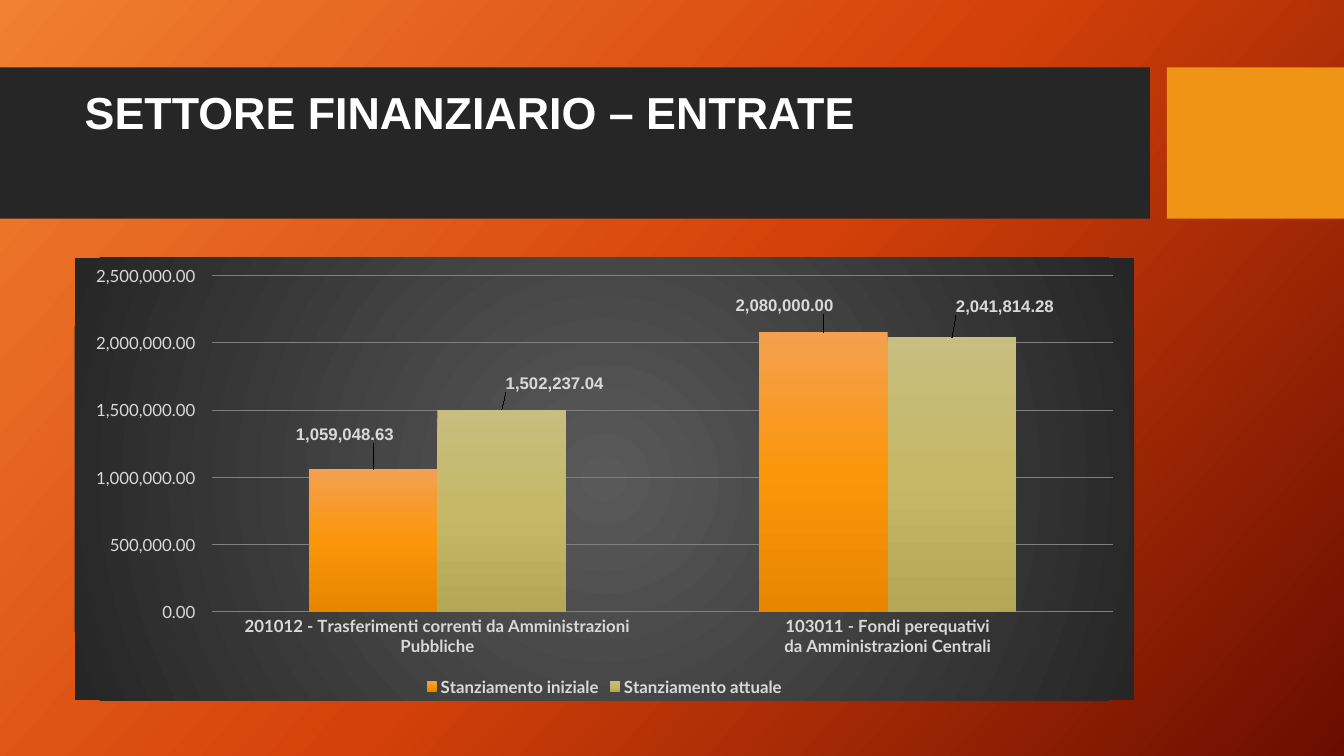
import dataclasses

import pptx
import pptx.chart.data
import pptx.dml.color
import pptx.enum.chart
import pptx.enum.shapes
import pptx.enum.text
import pptx.oxml
import pptx.oxml.ns
import pptx.util

Cm = pptx.util.Cm
COLORS = {
    "band": "262626",
    "accent": "F09415",
    "white": "FFFFFF",
    "label": "D9D9D9",
    "grid": "808080",
}
BACKGROUND = ((0, "F18031"), (50, "D54209"), (100, "6A0D00"))
PANEL = ((0, "595959"), (100, "262626"))
EURO_FORMAT = "#,##0.00\\ _€"
CATEGORIES = (
    "201012 - Trasferimenti correnti da Amministrazioni Pubbliche",
    "103011 - Fondi perequativi\nda Amministrazioni Centrali",
)


@dataclasses.dataclass
class Band:
    left: float
    width: float
    color: str


@dataclasses.dataclass
class Allocation:
    name: str
    values: tuple
    stops: tuple
    number_format: str
    label_shifts: tuple


BANDS = (Band(0, 28.98, "band"), Band(29.41, 4.46, "accent"))
ALLOCATIONS = (
    Allocation(
        "Stanziamento iniziale", (1059048.63, 2080000),
        ((0, "F4A050"), (50, "FB960A"), (100, "E88600")),
        EURO_FORMAT, ((-0.02, -0.05), (-0.03, -0.03)),
    ),
    Allocation(
        "Stanziamento attuale", (1502237.04, 2041814.28),
        ((0, "C8BE7F"), (50, "C5B867"), (100, "B4A756")),
        "#,##0.00", ((0.05, -0.03), (0.05, -0.04)),
    ),
)


def rgb(name: str) -> pptx.dml.color.RGBColor:
    return pptx.dml.color.RGBColor.from_string(COLORS[name])


def format_font(font, size=12, color="label", bold=False, name="Lato") -> None:
    font.size = pptx.util.Pt(size)
    font.color.rgb = rgb(color)
    font.bold = bold
    font.name = name


def put_text(tf, text: str, spacing=1.0, **font_format) -> None:
    p = tf.paragraphs[0]
    p.alignment = pptx.enum.text.PP_ALIGN.LEFT
    p.line_spacing = spacing
    r = p.add_run()
    r.text = text
    format_font(r.font, **font_format)


def gradient(stops: tuple, angle=None):
    marks = "".join(
        f'<a:gs pos="{pos * 1000}"><a:srgbClr val="{color}"/></a:gs>'
        for pos, color in stops
    )
    if angle is None:
        shade = ('<a:path path="circle"><a:fillToRect l="50000" t="50000" '
                 'r="50000" b="50000"/></a:path>')
    else:
        shade = f'<a:lin ang="{angle * 60000}" scaled="0"/>'
    return pptx.oxml.parse_xml(
        f'<a:gradFill {pptx.oxml.ns.nsdecls("a")} rotWithShape="1">'
        f"<a:gsLst>{marks}</a:gsLst>{shade}</a:gradFill>"
    )


def chart_element(tag: str, content="", attributes=""):
    return pptx.oxml.parse_xml(
        f'<c:{tag} {pptx.oxml.ns.nsdecls("c", "a")} {attributes}>{content}</c:{tag}>'
    )


def manual_layout(**settings):
    content = "".join(f'<c:{key} val="{val}"/>' for key, val in settings.items())
    return chart_element("layout", f"<c:manualLayout>{content}</c:manualLayout>")


def draw_background(s) -> None:
    s.background.fill.gradient()
    old = s.element.xpath(".//p:bgPr/a:gradFill")[0]
    old.getparent().replace(old, gradient(BACKGROUND, 42))


def draw_band(s, band: Band) -> None:
    sp = s.shapes.add_shape(
        pptx.enum.shapes.MSO_SHAPE.RECTANGLE,
        Cm(band.left), Cm(1.7), Cm(band.width), Cm(3.81),
    )
    sp.shadow.inherit = False
    sp.fill.solid()
    sp.fill.fore_color.rgb = rgb(band.color)
    sp.line.fill.background()


def draw_title(s) -> None:
    sp = s.shapes.title
    sp.left, sp.top, sp.width, sp.height = Cm(1.88), Cm(2.08), Cm(26.7), Cm(3)
    sp.element.getparent().append(sp.element)
    tf = sp.text_frame
    tf.auto_size = pptx.enum.text.MSO_AUTO_SIZE.NONE
    tf.vertical_anchor = pptx.enum.text.MSO_ANCHOR.TOP
    tf.margin_top = Cm(0.2)
    put_text(tf, "SETTORE FINANZIARIO – ENTRATE", spacing=0.9,
             size=32, color="white", bold=True, name="Arial")


def format_axis(axis, bold: bool) -> None:
    axis.major_tick_mark = pptx.enum.chart.XL_TICK_MARK.NONE
    axis.minor_tick_mark = pptx.enum.chart.XL_TICK_MARK.NONE
    axis.format.line.fill.background()
    format_font(axis.tick_labels.font, bold=bold)


def format_series(series, allocation: Allocation) -> None:
    series.format.fill.background()
    old = series._element.xpath("c:spPr/a:noFill")[0]
    old.getparent().replace(old, gradient(allocation.stops, 90))
    labels = series.data_labels
    labels.show_value = True
    labels.number_format = allocation.number_format
    labels.number_format_is_linked = False
    format_font(labels.font, bold=True, name="Arial")
    for i, (dx, dy) in enumerate(allocation.label_shifts):
        label = series.points[i].data_label
        format_font(label.font, bold=True, name="Arial")
        label.position = pptx.enum.chart.XL_LABEL_POSITION.OUTSIDE_END
        idx = series._element.xpath(f'c:dLbls/c:dLbl/c:idx[@val="{i}"]')[0]
        idx.addnext(chart_element(
            "numFmt",
            attributes=f'formatCode="{allocation.number_format}" sourceLinked="0"',
        ))
        idx.addnext(manual_layout(x=dx, y=dy))


def draw_chart(s) -> None:
    data = pptx.chart.data.CategoryChartData(number_format="#,##0.00")
    data.categories = CATEGORIES
    for allocation in ALLOCATIONS:
        data.add_series(allocation.name, allocation.values)
    chart = s.shapes.add_chart(
        pptx.enum.chart.XL_CHART_TYPE.COLUMN_CLUSTERED,
        Cm(1.88), Cm(6.5), Cm(26.7), Cm(11.15), data,
    ).chart
    chart.has_title = False
    format_font(chart.font, size=10, color="white")
    chart.has_legend = True
    chart.legend.position = pptx.enum.chart.XL_LEGEND_POSITION.BOTTOM
    chart.legend.include_in_layout = False
    format_font(chart.legend.font, bold=True)

    format_axis(chart.category_axis, bold=True)
    axis = chart.value_axis
    format_axis(axis, bold=False)
    axis.minimum_scale, axis.maximum_scale, axis.major_unit = 0, 2500000, 500000
    axis.tick_labels.number_format = EURO_FORMAT
    axis.tick_labels.number_format_is_linked = False
    axis.major_gridlines.format.line.color.rgb = rgb("grid")
    axis.major_gridlines.format.line.width = pptx.util.Pt(0.75)

    plot = chart.plots[0]
    plot.gap_width, plot.overlap, plot.vary_by_categories = 150, 0, False
    for series, allocation in zip(plot.series, ALLOCATIONS):
        format_series(series, allocation)

    area = chart.element.xpath("c:chart/c:plotArea")[0]
    for old in area.xpath("c:layout"):
        area.remove(old)
    area.insert(0, manual_layout(layoutTarget="inner", xMode="edge", yMode="edge",
                                 x=0.13, y=0.04, w=0.85, h=0.76))
    panel = chart_element("spPr", "<a:ln><a:noFill/></a:ln>")
    panel.insert(0, gradient(PANEL))
    area.getparent().addnext(panel)


def main() -> None:
    prs = pptx.Presentation()
    prs.slide_width, prs.slide_height = Cm(33.87), Cm(19.05)
    s = prs.slides.add_slide(prs.slide_layouts[5])
    draw_background(s)
    for band in BANDS:
        draw_band(s, band)
    draw_title(s)
    draw_chart(s)
    prs.save("out.pptx")


if __name__ == "__main__":
    main()
